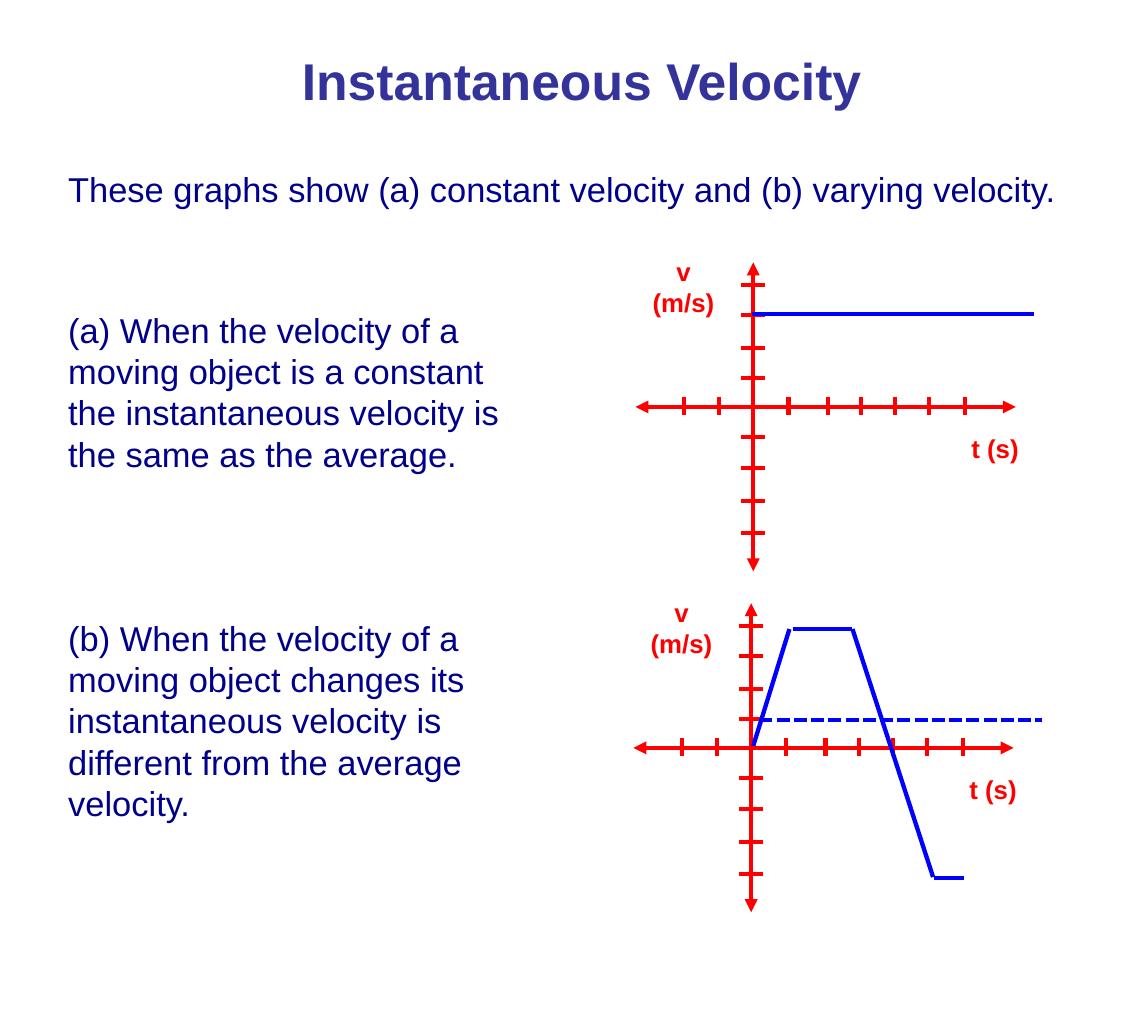
from pptx import Presentation
from pptx.dml.color import RGBColor
from pptx.enum.dml import MSO_LINE
from pptx.enum.shapes import MSO_CONNECTOR
from pptx.enum.text import MSO_ANCHOR, MSO_AUTO_SIZE, PP_ALIGN
from pptx.oxml.ns import qn
from pptx.util import Inches, Pt
from lxml.etree import SubElement

INDIGO = RGBColor(0x33, 0x33, 0x99)
NAVY = RGBColor(0x00, 0x00, 0x8B)
RED = RGBColor(0xFF, 0x00, 0x00)
BLUE = RGBColor(0x00, 0x00, 0xFF)

# Tick positions measured from the origin of a graph
TIME_TICKS = [-0.67, -0.33, 0.34, 0.72, 1.04, 1.37, 1.7, 2.05]
VELOCITY_TICKS = [-1.18, -0.89, -0.57, -0.28, 0.29, 0.59, 0.91, 1.22]


def write(shape, text, size=24, color=NAVY, bold=False, align=PP_ALIGN.LEFT):
    """Fill a shape with text, one paragraph per line."""
    tf = shape.text_frame
    tf.word_wrap = True
    tf.auto_size = MSO_AUTO_SIZE.NONE
    tf.vertical_anchor = MSO_ANCHOR.TOP
    tf.text = text
    for p in tf.paragraphs:
        p.alignment = align
        p.space_before = Pt(0)
        pPr = p._p.get_or_add_pPr()
        pPr.set("marL", "0")
        pPr.set("indent", "0")
        SubElement(pPr, qn("a:buNone"))
        for r in p.runs:
            r.font.name = "Arial"
            r.font.size = Pt(size)
            r.font.bold = bold
            r.font.color.rgb = color


class SlideBuilder:
    line_width = Pt(3)

    def __init__(self, slide):
        self.s = slide

    def placeholder(self, idx, text, x, y, w, h, **fmt):
        sp = self.s.placeholders[idx]
        sp.left, sp.top, sp.width, sp.height = map(Inches, (x, y, w, h))
        write(sp, text, **fmt)

    def label(self, text, x, y, w, h):
        sp = self.s.shapes.add_textbox(*map(Inches, (x, y, w, h)))
        write(sp, text, size=18, color=RED, bold=True, align=PP_ALIGN.CENTER)

    def line(self, x1, y1, x2, y2, color=RED, arrows=False, dotted=False):
        sp = self.s.shapes.add_connector(
            MSO_CONNECTOR.STRAIGHT, *map(Inches, (x1, y1, x2, y2)))
        sp.line.color.rgb = color
        sp.line.width = self.line_width
        if dotted:
            sp.line.dash_style = MSO_LINE.SQUARE_DOT
        if arrows:
            ln = sp.line._get_or_add_ln()
            for end in ("a:headEnd", "a:tailEnd"):
                SubElement(ln, qn(end), type="triangle")
        SubElement(sp._element.spPr, qn("a:effectLst"))

    def axes(self, x, y):
        """Draw both axes with ticks and names around the origin x, y."""
        self.line(x, y - 1.4, x, y + 1.59, arrows=True)
        self.line(x - 1.14, y, x + 2.54, y, arrows=True)
        for dx in TIME_TICKS:
            self.line(x + dx, y - 0.1, x + dx, y + 0.08)
        for dy in VELOCITY_TICKS:
            self.line(x - 0.12, y + dy, x + 0.11, y + dy)
        self.label("v\n(m/s)", x - 1.19, y - 1.51, 1.03, 0.71)
        self.label("t (s)", x + 1.87, y + 0.2, 0.94, 0.4)


def main():
    prs = Presentation()
    prs.slide_width, prs.slide_height = Inches(11.11), Inches(10)
    s = prs.slides.add_slide(prs.slide_layouts[4])
    b = SlideBuilder(s)

    # Title and explanations
    b.placeholder(0, "Instantaneous Velocity", 2.38, 0.42, 6.5, 0.71,
                  size=36, color=INDIGO, bold=True, align=PP_ALIGN.CENTER)
    b.placeholder(1, "These graphs show (a) constant velocity and "
                  "(b) varying velocity.", 0.56, 1.58, 9.86, 0.5)
    b.placeholder(2, "(a) When the velocity of a moving object is a constant "
                  "the instantaneous velocity is the same as the average.",
                  0.56, 2.94, 4.44, 1.72)
    b.placeholder(3, "(b) When the velocity of a moving object changes its "
                  "instantaneous velocity is different from the average "
                  "velocity.", 0.56, 5.92, 4.39, 2.12)

    # Graph (a): constant velocity
    b.axes(7.29, 3.94)
    b.line(7.28, 3.04, 10.01, 3.04, color=BLUE)

    # Graph (b): varying velocity with its dotted average
    b.line(7.35, 6.97, 10.08, 6.97, color=BLUE, dotted=True)
    b.axes(7.27, 7.24)
    for segment in [(7.29, 7.22, 7.64, 6.09), (7.67, 6.09, 8.25, 6.09),
                    (8.25, 6.09, 9.03, 8.49), (9.04, 8.5, 9.33, 8.5)]:
        b.line(*segment, color=BLUE)

    # Remove placeholders left empty
    for sp in list(s.placeholders):
        if not sp.text_frame.text:
            sp._element.getparent().remove(sp._element)

    prs.save("out.pptx")


if __name__ == "__main__":
    main()
